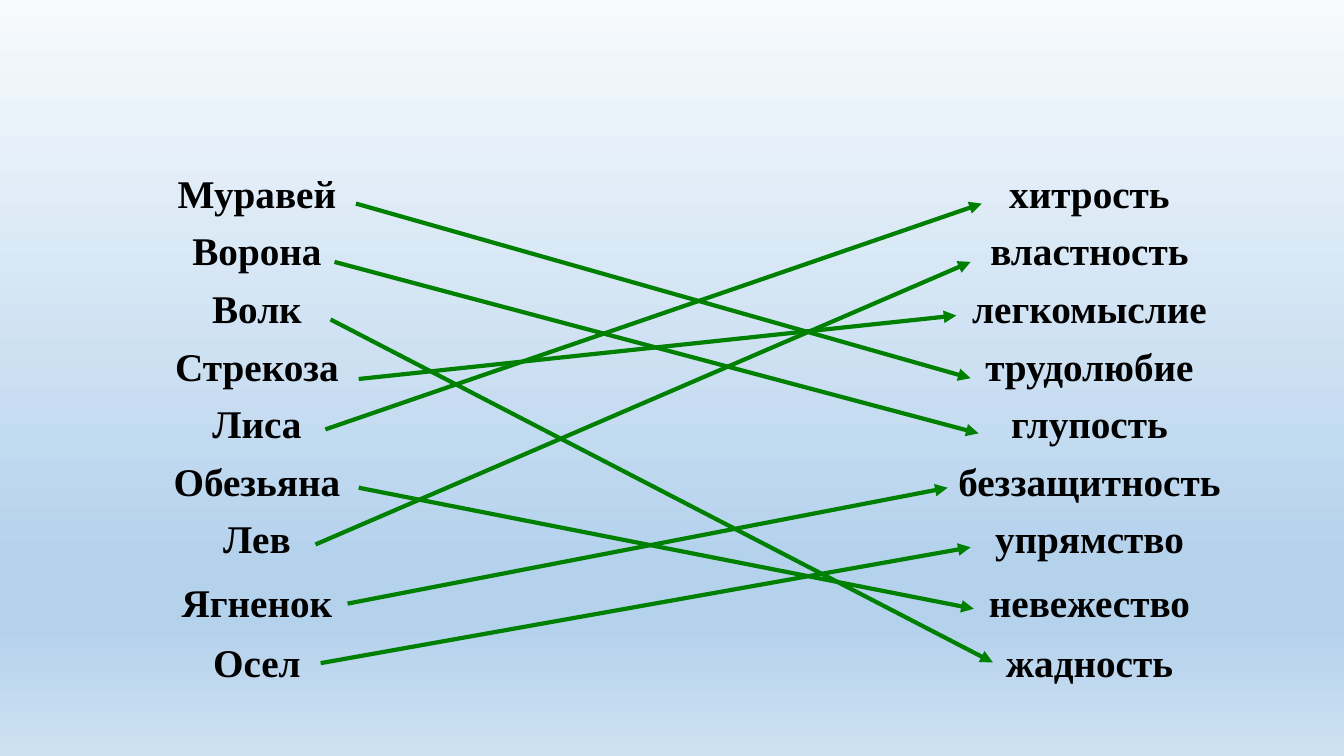
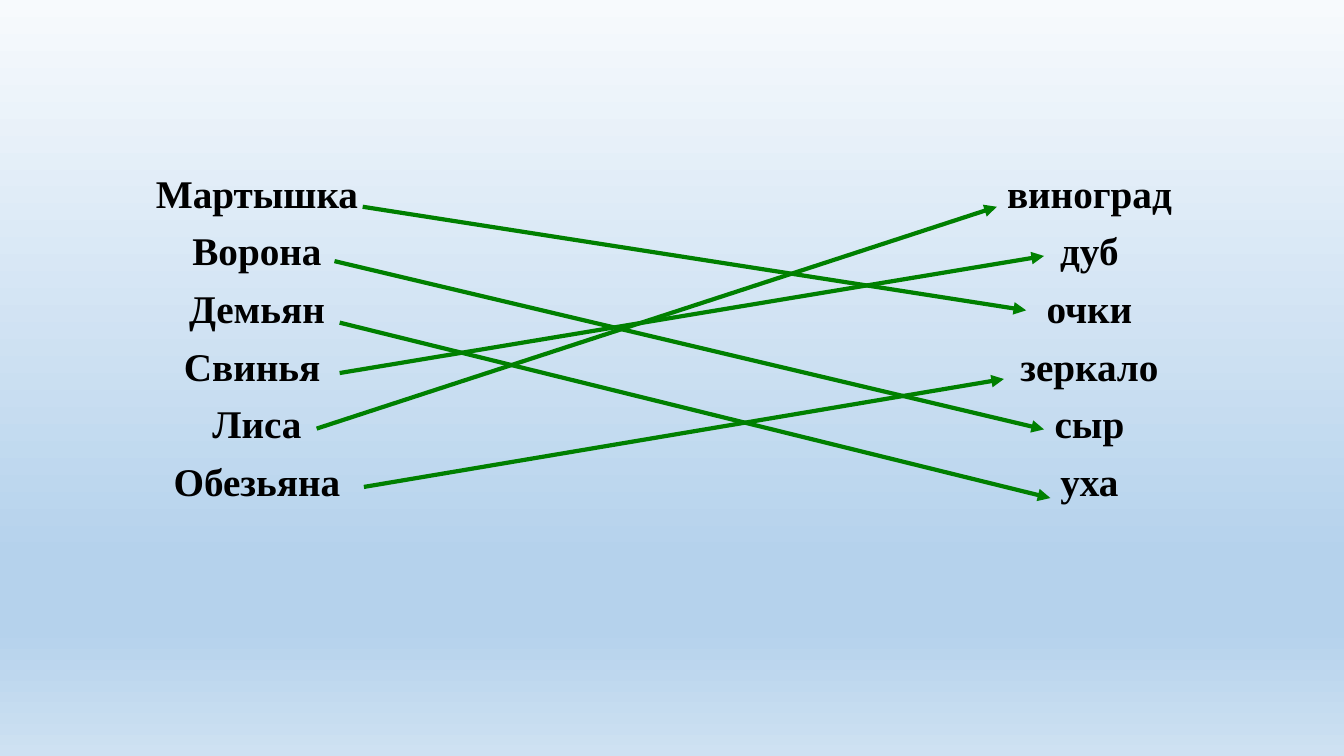
from pptx import Presentation
from pptx.dml.color import RGBColor
from pptx.enum import shapes, text
from pptx.oxml import ns
from pptx.util import Cm, Pt
from lxml import etree

MATCHES = [
    {
        "left": [
            ("Муравей", (8.97, 5.13), (24.46, 9.53)),
            ("Ворона", (8.43, 6.6), (24.66, 10.92)),
            ("Волк", (8.33, 8.05), (25.02, 16.69)),
            ("Стрекоза", (9.04, 9.55), (24.1, 7.95)),
            ("Лиса", (8.2, 10.82), (24.74, 5.13)),
            ("Обезьяна", (9.04, 12.29), (24.54, 15.34)),
            ("Лев", (7.95, 13.72), (24.46, 6.6)),
            ("Ягненок", (8.76, 15.21), (23.88, 12.29)),
            ("Осел", (8.08, 16.71), (24.46, 13.79)),
        ],
        "right": ["хитрость", "властность", "легкомыслие", "трудолюбие", "глупость",
                  "беззащитность", "упрямство", "невежество", "жадность"],
    },
    {
        "left": [
            ("Мартышка", (9.14, 5.21), (25.86, 7.82)),
            ("Ворона", (8.43, 6.58), (26.31, 10.82)),
            ("Демьян", (8.56, 8.13), (26.47, 12.55)),
            ("Свинья ", (8.56, 9.4), (26.31, 6.45)),
            ("Лиса", (7.98, 10.8), (25.12, 5.21)),
            ("Обезьяна", (9.17, 12.27), (25.3, 9.55)),
        ],
        "right": ["виноград", "дуб", "очки", "зеркало", "сыр", "уха"],
    },
]

COLORS = {"text": "000000", "arrow": "008000"}
GRADIENT = [(0, "F7FAFD"), (74, "B5D2EC"), (83, "B5D2EC"), (100, "CEE1F2")]
COLS = [10.41, 10.63, 10.29]
ROWS = [1.45] * 7 + [1.52, 1.83]
LOOSE_ROW = 7
FONT = {"name": "Times New Roman", "size": Pt(28), "bold": True}
CELL = {"margin_left": Cm(0.18), "margin_right": Cm(0.18), "margin_top": 0,
        "margin_bottom": 0, "vertical_anchor": text.MSO_ANCHOR.TOP}
TABLE = {"first_row": False, "horz_banding": False}


def apply(obj, values):
    for name, value in values.items():
        setattr(obj, name, value)


def add_xml(parent, tag, **attrs):
    return etree.SubElement(parent, ns.qn(tag), attrs)


def set_background(master):
    fill = master.background.fill
    fill.gradient()
    fill.gradient_angle = 270
    stops = master.element.find(".//" + ns.qn("a:gsLst"))
    for stop in list(stops):
        stops.remove(stop)
    for pos, color in GRADIENT:
        stop = add_xml(stops, "a:gs", pos=str(pos * 1000))
        add_xml(stop, "a:srgbClr", val=color)


def clear_cell(cell):
    apply(cell, CELL)
    tcPr = cell._tc.get_or_add_tcPr()
    for side in "LRTB":
        add_xml(add_xml(tcPr, "a:ln" + side), "a:noFill")
    cell.fill.background()


def write_cell(cell, word, loose):
    p = cell.text_frame.paragraphs[0]
    p.alignment = text.PP_ALIGN.CENTER
    if loose:
        p.line_spacing = 1.15
    r = p.add_run()
    r.text = word
    apply(r.font, FONT)
    r.font.color.rgb = RGBColor.from_string(COLORS["text"])


def add_words(s, left, right):
    table = s.shapes.add_table(len(ROWS), len(COLS), Cm(1.27), Cm(4.37),
                               Cm(sum(COLS)), Cm(sum(ROWS))).table
    apply(table, TABLE)
    for col, width in zip(table.columns, COLS):
        col.width = Cm(width)
    for row, height in zip(table.rows, ROWS):
        row.height = Cm(height)
    for cell in table.iter_cells():
        clear_cell(cell)
    table.cell(0, 1).merge(table.cell(len(ROWS) - 1, 1))
    for c, words in ((0, left), (2, right)):
        for i, word in enumerate(words):
            write_cell(table.cell(i, c), word, i >= LOOSE_ROW)


def add_arrow(s, start, end):
    points = [Cm(v) for v in start + end]
    sp = s.shapes.add_connector(shapes.MSO_CONNECTOR.STRAIGHT, *points)
    sp.line.color.rgb = RGBColor.from_string(COLORS["arrow"])
    sp.line.width = Pt(3)
    add_xml(sp.line._get_or_add_ln(), "a:tailEnd", type="triangle")
    add_xml(sp._element.spPr, "a:effectLst")


def main():
    prs = Presentation()
    prs.slide_width, prs.slide_height = Cm(33.87), Cm(19.05)
    set_background(prs.slide_master)
    for match in MATCHES:
        s = prs.slides.add_slide(prs.slide_layouts[6])
        add_words(s, [word for word, _, _ in match["left"]], match["right"])
        for _, start, end in match["left"]:
            add_arrow(s, start, end)
    prs.save("out.pptx")


if __name__ == "__main__":
    main()
